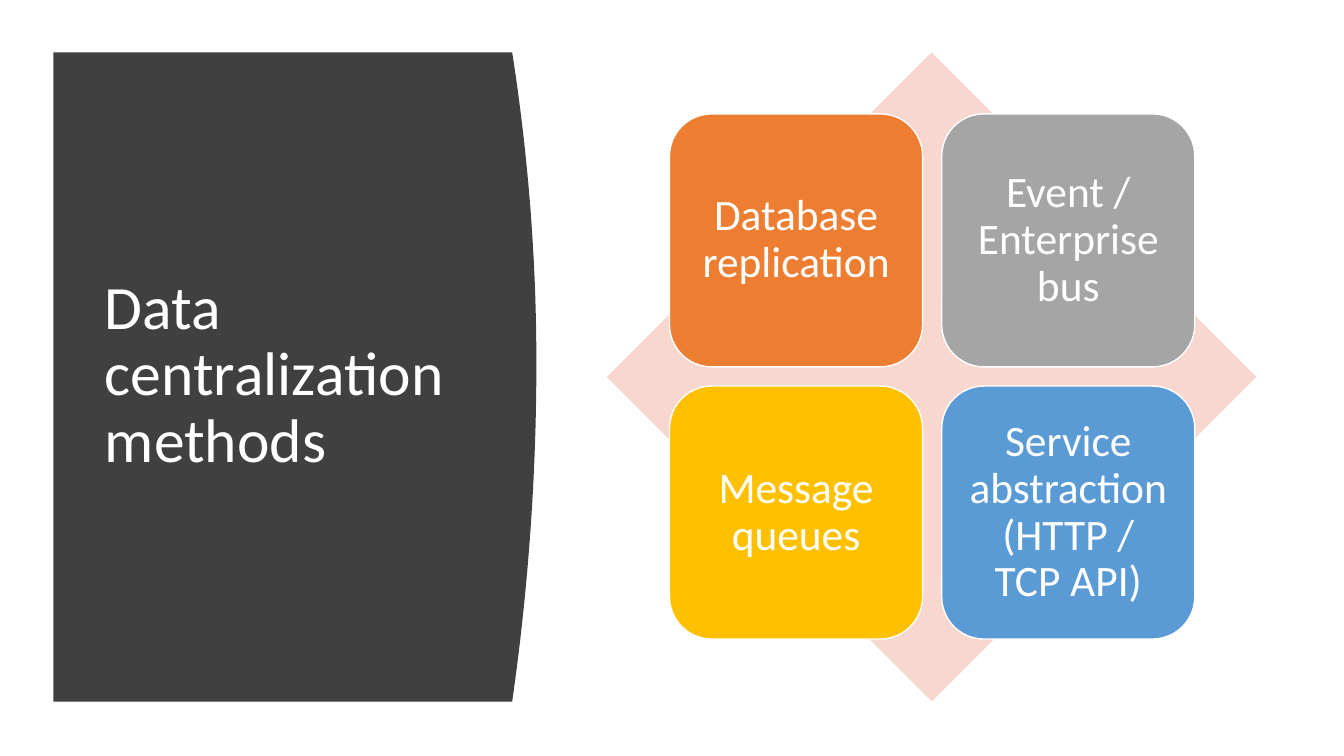
from dataclasses import dataclass

from pptx import Presentation
from pptx.dml.color import RGBColor
from pptx.enum.shapes import MSO_SHAPE
from pptx.enum.text import MSO_ANCHOR, MSO_AUTO_SIZE, PP_ALIGN
from pptx.util import Inches, Pt

DIAMOND, ROUNDED = MSO_SHAPE.DIAMOND, MSO_SHAPE.ROUNDED_RECTANGLE
LEFT, CENTER = PP_ALIGN.LEFT, PP_ALIGN.CENTER
MIDDLE, NO_AUTOFIT = MSO_ANCHOR.MIDDLE, MSO_AUTO_SIZE.NONE
TITLE_ONLY = 5


@dataclass(frozen=True)
class Theme:
    font: str = "Calibri"
    title_size: int = 44
    method_size: int = 31
    line_spacing: float = 0.9
    panel: str = "404040"
    diamond: str = "F8D7CE"
    light: str = "FFFFFF"
    orange: str = "ED7D31"
    grey: str = "A5A5A5"
    yellow: str = "FFC000"
    blue: str = "5B9BD5"


class SlideBuilder:
    def __init__(self, slide, theme):
        self.slide = slide
        self.theme = theme

    def paint(self, shape, fill, outline=None):
        shape.shadow.inherit = False
        shape.fill.solid()
        shape.fill.fore_color.rgb = RGBColor.from_string(fill)
        if outline:
            shape.line.color.rgb = RGBColor.from_string(outline)
            shape.line.width = Pt(1)
        else:
            shape.line.fill.background()

    def set_text(self, shape, wording, size, align, inset_x, inset_y):
        frame = shape.text_frame
        frame.word_wrap = True
        frame.auto_size = NO_AUTOFIT
        frame.vertical_anchor = MIDDLE
        frame.margin_left = frame.margin_right = Inches(inset_x)
        frame.margin_top = frame.margin_bottom = Inches(inset_y)
        paragraph = frame.paragraphs[0]
        paragraph.alignment = align
        paragraph.line_spacing = self.theme.line_spacing
        run = paragraph.add_run()
        run.text = wording
        run.font.name = self.theme.font
        run.font.size = Pt(size)
        run.font.color.rgb = RGBColor.from_string(self.theme.light)

    def title(self, wording, left, top, width, height):
        heading = self.slide.shapes.title
        heading.left, heading.top = Inches(left), Inches(top)
        heading.width, heading.height = Inches(width), Inches(height)
        self.set_text(heading, wording, self.theme.title_size, LEFT, 0.1, 0.05)

    def curved_panel(self, left, top, bottom, edge, bulge, peak, steps=40):
        """Panel whose right side follows two half parabolas meeting at peak."""
        outline = [(left, top)]
        for step in range(steps + 1):
            y = top + (bottom - top) * step / steps
            reach = peak - top if y < peak else bottom - peak
            outline.append((edge + bulge * (1 - ((y - peak) / reach) ** 2), y))
        outline.append((left, bottom))
        points = [(Inches(x), Inches(y)) for x, y in outline]
        builder = self.slide.shapes.build_freeform(*points[0])
        builder.add_line_segments(points[1:], close=True)
        panel = builder.convert_to_shape()
        self.paint(panel, self.theme.panel)
        # Keep the panel behind the title
        self.slide.shapes.title.element.addprevious(panel.element)

    def square(self, kind, left, top, side, fill, outline=None):
        shape = self.slide.shapes.add_shape(
            kind, Inches(left), Inches(top), Inches(side), Inches(side))
        self.paint(shape, fill, outline)
        return shape

    def method(self, wording, left, top, side, fill):
        tile = self.square(ROUNDED, left, top, side, fill, self.theme.light)
        self.set_text(tile, wording, self.theme.method_size, CENTER, 0.13, 0.13)


def main():
    deck = Presentation()
    deck.slide_width, deck.slide_height = Inches(13.33), Inches(7.5)
    theme = Theme()
    page = SlideBuilder(deck.slides.add_slide(deck.slide_layouts[TITLE_ONLY]), theme)

    # Title panel
    page.curved_panel(left=0.53, top=0.52, bottom=6.96, edge=5.08, bulge=0.24, peak=3.6)
    page.title("Data centralization methods", 0.94, 1.11, 3.74, 5.24)

    # Matrix of methods on a diamond
    page.square(DIAMOND, 6.02, 0.52, 6.44, theme.diamond)
    methods = [
        ("Database replication", theme.orange),
        ("Event / Enterprise bus", theme.grey),
        ("Message queues", theme.yellow),
        ("Service abstraction (HTTP / TCP API)", theme.blue),
    ]
    side, pitch = 2.51, 2.7
    for index, (wording, fill) in enumerate(methods):
        row, column = divmod(index, 2)
        page.method(wording, 6.64 + column * pitch, 1.13 + row * pitch, side, fill)

    deck.save("out.pptx")


if __name__ == "__main__":
    main()
